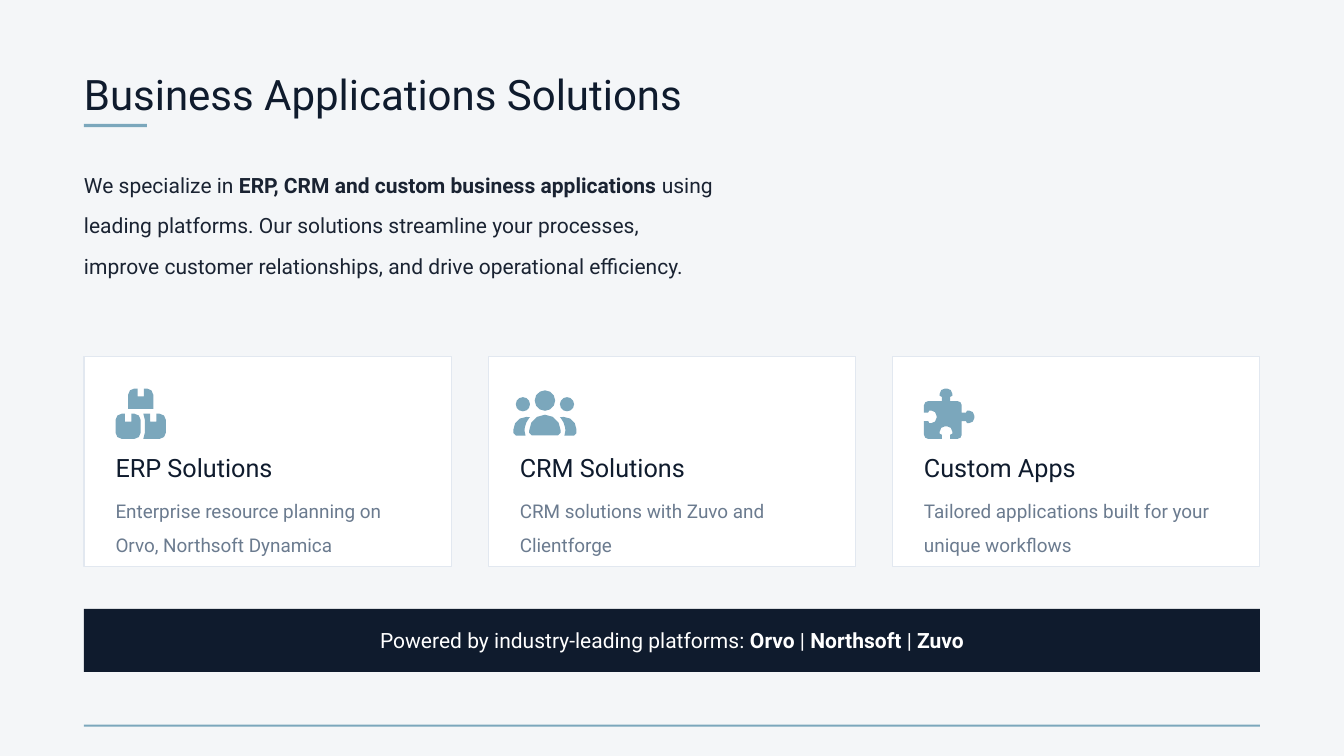
from math import cos, hypot, pi, sin
from typing import NamedTuple

from pptx import Presentation
from pptx.dml.color import RGBColor
from pptx.enum.shapes import MSO_SHAPE as Preset
from pptx.enum.text import MSO_ANCHOR as Anchor, PP_ALIGN as Align
from pptx.util import Pt

COLORS = {
    "background": "F4F6F8",
    "navy": "0F1B2D",
    "body": "1A2332",
    "muted": "6B7B8F",
    "accent": "7BA7BC",
    "border": "E2E8F0",
    "white": "FFFFFF",
}
FONT = "Roboto"
MARGIN, CONTENT_WIDTH = 80, 1120
CARD_TOP, CARD_WIDTH, CARD_HEIGHT, CARD_PADDING = 340, 350, 200, 30
CARD_STEP = (CONTENT_WIDTH - CARD_WIDTH) / 2
UNITS_PER_POINT = 100


class Box(NamedTuple):
    left: float
    top: float
    width: float
    height: float


class Corner(NamedTuple):
    x: float
    y: float
    radius: float = 0


class Span(NamedTuple):
    text: str
    bold: bool = False


class TextStyle(NamedTuple):
    size: float
    color: str
    line_spacing: float = 1.0
    anchor: Anchor = Anchor.TOP
    align: Align = Align.LEFT
    wrap: bool = True


class Card(NamedTuple):
    heading: str
    description: str
    icon: list[list[Corner]]
    icon_shift: float = 0


TITLE = TextStyle(40, "navy", 1.3, Anchor.MIDDLE, wrap=False)
INTRO = TextStyle(20, "body", 1.6)
HEADING = TextStyle(24, "navy", anchor=Anchor.MIDDLE, wrap=False)
DESCRIPTION = TextStyle(18, "muted", 1.5)
BANNER = TextStyle(20, "white", anchor=Anchor.MIDDLE, align=Align.CENTER, wrap=False)


def corners(*values: tuple) -> list[Corner]:
    """Turn plain tuples into an outline of corners."""
    return [Corner(*value) for value in values]


def circle(x: float, y: float, radius: float) -> list[Corner]:
    """Return a circle as a square with fully rounded corners."""
    return [Corner(x + dx * radius, y + dy * radius, radius)
            for dx, dy in ((-1, -1), (1, -1), (1, 1), (-1, 1))]


def mirrored(outline: list[Corner], width: float) -> list[Corner]:
    """Flip an outline from left to right."""
    return [corner._replace(x=width - corner.x) for corner in outline]


def notch(left: float, top: float) -> list[tuple]:
    """Return the slot in the top edge of a parcel."""
    return [(left, top), (left, top + 7.5), (left + 6, top + 7.5), (left + 6, top)]


def parcels_icon() -> list[list[Corner]]:
    """Return three stacked parcels."""
    return [
        corners((12, 0, 6), *notch(21, 0), (36, 0, 6), (36, 19.4), (12, 19.4)),
        corners((0, 24, 6), *notch(9, 24), (24, 24, 6), (24, 48, 6), (0, 48, 6)),
        corners((26.5, 24), *notch(33, 24), (48, 24, 6), (48, 48, 6),
                (26.5, 48), (28, 42), (28, 30)),
    ]


def people_icon() -> list[list[Corner]]:
    """Return a group of three people."""
    head = circle(9, 15, 6.75)
    shoulder = corners((0, 45, 2.5), (0, 27, 12), (15.8, 27.2),
                       (11.5, 32, 5), (10.5, 40), (11.5, 45))
    torso = corners((15, 25, 15), (45, 25, 15), (45, 44.7, 2.5), (15, 44.7, 2.5))
    return [circle(30, 11.5, 9.75), torso, head, shoulder,
            mirrored(head, 60), mirrored(shoulder, 60)]


def puzzle_icon() -> list[list[Corner]]:
    """Return a puzzle piece with two knobs and two sockets."""
    return [corners(
        (0, 12, 4), (17, 12), (17, 8), (15, 7), (15, 0, 5),
        (27, 0, 5), (27, 7), (25, 8), (25, 12),
        (36, 12, 4), (36, 23), (40, 23), (41, 21), (48, 21, 5),
        (48, 33, 5), (41, 33), (40, 31), (36, 31),
        (36, 48, 4), (25, 48), (25, 44), (27, 43), (27, 36, 5),
        (15, 36, 5), (15, 43), (17, 44), (17, 48),
        (0, 48, 4), (0, 31), (4, 31), (5, 33), (12, 33, 5),
        (12, 21, 5), (5, 21), (4, 23), (0, 23),
    )]


def rgb(name: str) -> RGBColor:
    """Look up a named colour."""
    return RGBColor.from_string(COLORS[name])


def paint(shape, fill: str, line: str | None = None) -> None:
    """Set fill and outline and remove the shadow."""
    shape.shadow.inherit = False
    shape.fill.solid()
    shape.fill.fore_color.rgb = rgb(fill)
    if line:
        shape.line.color.rgb = rgb(line)
        shape.line.width = Pt(1)
    else:
        shape.line.fill.background()


def add_rectangle(slide, box: Box, fill: str, line: str | None = None) -> None:
    """Draw a rectangle."""
    paint(slide.shapes.add_shape(Preset.RECTANGLE, *map(Pt, box)), fill, line)


def add_text(slide, box: Box, style: TextStyle, *spans: Span) -> None:
    """Draw one paragraph of styled spans."""
    frame = slide.shapes.add_textbox(*map(Pt, box)).text_frame
    frame.margin_left = frame.margin_right = frame.margin_top = frame.margin_bottom = 0
    frame.word_wrap = style.wrap
    frame.vertical_anchor = style.anchor
    paragraph = frame.paragraphs[0]
    paragraph.alignment = style.align
    paragraph.line_spacing = style.line_spacing
    for span in spans:
        run = paragraph.add_run()
        run.text = span.text
        run.font.name = FONT
        run.font.size = Pt(style.size)
        run.font.bold = span.bold
        run.font.color.rgb = rgb(style.color)


def arc_steps(radius: float) -> int:
    """Choose how finely a corner is rounded."""
    return 0 if radius == 0 else 1 if radius < 3 else 2 if radius <= 6 else 3


def rounded_points(outline: list[Corner]) -> list[tuple[int, int]]:
    """Replace each rounded corner by points along its arc."""
    points = []
    for index, (x, y, radius) in enumerate(outline):
        before, after = outline[index - 1], outline[(index + 1) % len(outline)]
        (ax, ay), (bx, by) = [
            (radius * (end.x - x) / hypot(end.x - x, end.y - y),
             radius * (end.y - y) / hypot(end.x - x, end.y - y))
            for end in (before, after)
        ]
        steps = arc_steps(radius)
        for step in range(steps + 1):
            angle = pi / 2 * step / max(steps, 1)
            toward, away = 1 - sin(angle), 1 - cos(angle)
            points.append((round((x + ax * toward + bx * away) * UNITS_PER_POINT),
                           round((y + ay * toward + by * away) * UNITS_PER_POINT)))
    return list(dict.fromkeys(points))


def add_icon(slide, left: float, top: float, outlines: list[list[Corner]]) -> None:
    """Draw all outlines of an icon as one freeform."""
    contours = [rounded_points(outline) for outline in outlines]
    builder = slide.shapes.build_freeform(*contours[0][0], scale=Pt(1) / UNITS_PER_POINT)
    for index, points in enumerate(contours):
        if index:
            builder.move_to(*points[0])
        builder.add_line_segments(points[1:], close=True)
    paint(builder.convert_to_shape(Pt(left), Pt(top)), "accent")


def add_card(slide, left: float, card: Card) -> None:
    """Draw a card with icon, heading and description."""
    inner_left, inner_width = left + CARD_PADDING, CARD_WIDTH - 2 * CARD_PADDING
    add_rectangle(slide, Box(left, CARD_TOP, CARD_WIDTH, CARD_HEIGHT), "white", "border")
    add_icon(slide, inner_left + card.icon_shift, CARD_TOP + CARD_PADDING, card.icon)
    add_text(slide, Box(inner_left, CARD_TOP + 90, inner_width, 30), HEADING, Span(card.heading))
    add_text(slide, Box(inner_left, CARD_TOP + 125, inner_width, 70), DESCRIPTION,
             Span(card.description))


def main() -> None:
    """Build and save the slide."""
    presentation = Presentation()
    presentation.slide_width, presentation.slide_height = Pt(1280), Pt(720)
    slide = presentation.slides.add_slide(presentation.slide_layouts[6])
    slide.background.fill.solid()
    slide.background.fill.fore_color.rgb = rgb("background")

    add_text(slide, Box(MARGIN, 55, 800, 55), TITLE, Span("Business Applications Solutions"))
    add_rectangle(slide, Box(MARGIN, 118, 60, 3), "accent")
    add_text(slide, Box(MARGIN, 150, 600, 160), INTRO, Span("We specialize in "),
             Span("ERP, CRM and custom business applications", True),
             Span(" using leading platforms. Our solutions streamline your processes, "
                  "improve customer relationships, and drive operational efficiency."))

    cards = [
        Card("ERP Solutions", "Enterprise resource planning on Orvo, Northsoft Dynamica",
             parcels_icon()),
        Card("CRM Solutions", "CRM solutions with Zuvo and Clientforge", people_icon(), -6),
        Card("Custom Apps", "Tailored applications built for your unique workflows",
             puzzle_icon()),
    ]
    for index, card in enumerate(cards):
        add_card(slide, MARGIN + index * CARD_STEP, card)

    add_rectangle(slide, Box(MARGIN, 580, CONTENT_WIDTH, 60), "navy")
    add_text(slide, Box(MARGIN + 20, 580, CONTENT_WIDTH - 40, 60), BANNER,
             Span("Powered by industry-leading platforms: "), Span("Orvo", True), Span(" | "),
             Span("Northsoft", True), Span(" | "), Span("Zuvo", True))
    add_rectangle(slide, Box(MARGIN, 690, CONTENT_WIDTH, 2), "accent")
    presentation.save("out.pptx")


if __name__ == "__main__":
    main()
